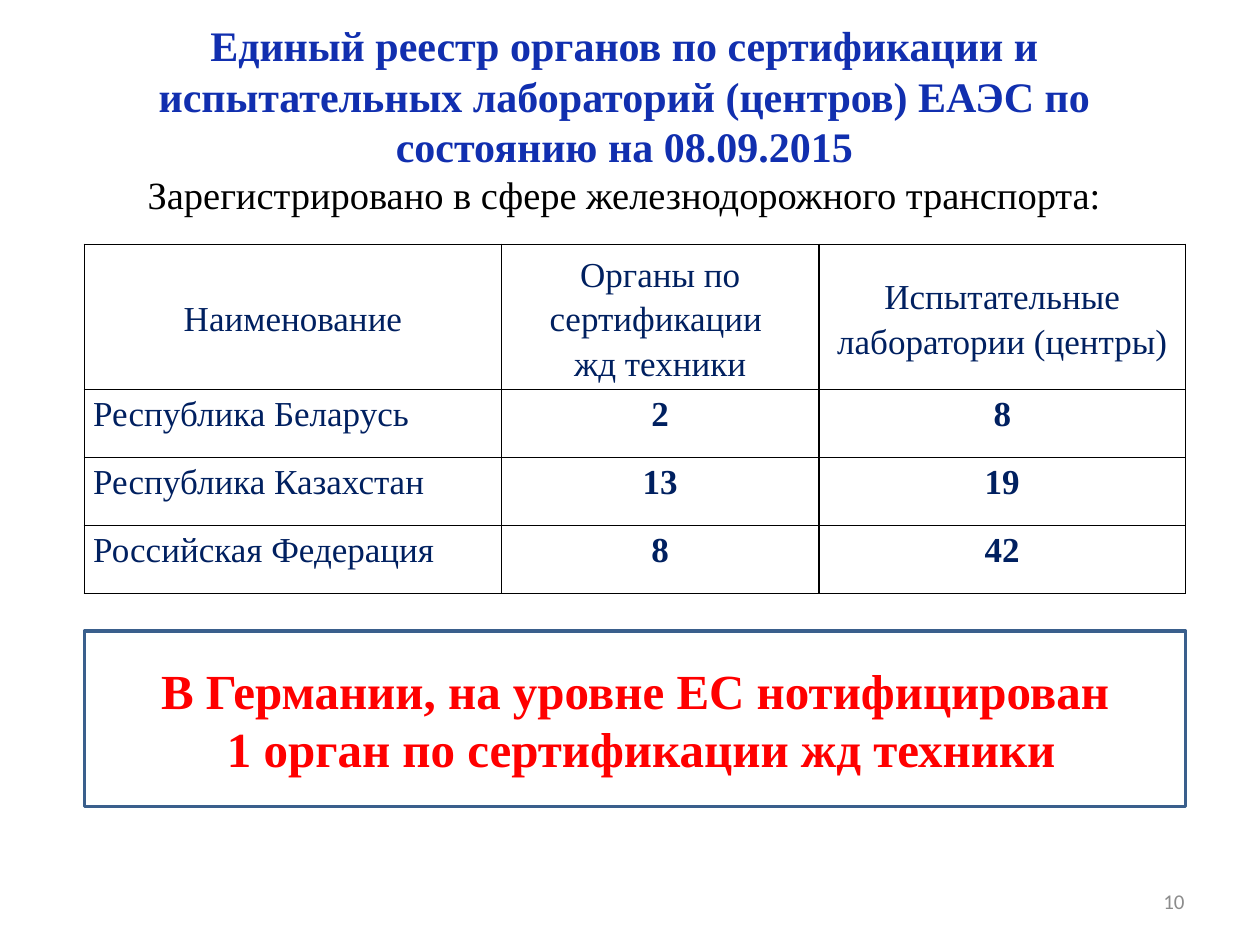
"""Build the slide on the unified register of certification bodies and test laboratories."""
from lxml.etree import SubElement
from pptx import Presentation
from pptx.dml.color import RGBColor
from pptx.enum.shapes import MSO_SHAPE
from pptx.enum.text import MSO_ANCHOR, MSO_AUTO_SIZE, PP_ALIGN
from pptx.oxml.ns import qn
from pptx.util import Inches, Pt

COLORS = {"heading": "112FAF", "black": "000000", "table": "002060", "white": "FFFFFF",
          "alert": "FF0000", "frame": "3A5F8C", "number": "8C8C8C"}
SERIF = "Times New Roman"
HEADER = ["Наименование", "Органы по сертификации \nжд техники",
          "Испытательные лаборатории (центры)"]
COUNTRIES = [["Республика Беларусь", "2", "8"],
             ["Республика Казахстан", "13", "19"],
             ["Российская Федерация", "8", "42"]]


def set_font(font, size, color, bold=False, name=SERIF):
    font.name, font.size, font.bold = name, Pt(size), bold
    font.color.rgb = RGBColor.from_string(COLORS[color])


def add_borders(cell):
    properties = cell._tc.get_or_add_tcPr()
    for side in ("lnL", "lnR", "lnT", "lnB"):
        border = SubElement(properties, qn(f"a:{side}"), w=str(Pt(1)))
        fill = SubElement(border, qn("a:solidFill"))
        SubElement(fill, qn("a:srgbClr"), val=COLORS["black"])


prs = Presentation()
prs.slide_width, prs.slide_height = Inches(10), Inches(7.5)
slide = prs.slides.add_slide(prs.slide_layouts[5])

title = slide.shapes.title
title.left, title.top = Inches(0.5), Inches(0.3)
title.width, title.height = Inches(8.91), Inches(0.85)
title_frame = title.text_frame
title_frame.auto_size = MSO_AUTO_SIZE.NONE
title_frame.word_wrap = True
title_frame.vertical_anchor = MSO_ANCHOR.MIDDLE
title_frame.margin_top = Inches(0.48)
heading = title_frame.paragraphs[0]
heading.alignment = PP_ALIGN.CENTER
register = heading.add_run()
register.text = ("Единый реестр органов по сертификации и испытательных лабораторий "
                 "(центров) ЕАЭС по состоянию на 08.09.2015")
set_font(register.font, 24, "heading", bold=True)
heading.add_line_break()
scope = heading.add_run()
scope.text = "Зарегистрировано в сфере железнодорожного транспорта:"
set_font(scope.font, 22, "black")

page = slide.shapes.add_textbox(Inches(7.17), Inches(6.95), Inches(2.33), Inches(0.4))
page.text_frame.word_wrap = True
page.text_frame.vertical_anchor = MSO_ANCHOR.MIDDLE
page_number = page.text_frame.paragraphs[0]
page_number.text = "10"
page_number.alignment = PP_ALIGN.RIGHT
set_font(page_number.font, 12, "number", name="Calibri")

registry = slide.shapes.add_table(4, 3, Inches(0.67), Inches(1.94),
                                  Inches(8.74), Inches(2.74)).table
for column, width in zip(registry.columns, (3.31, 2.52, 2.91)):
    column.width = Inches(width)
for row, height in zip(registry.rows, (1.12, 0.54, 0.54, 0.54)):
    row.height = Inches(height)
for r, values in enumerate([HEADER, *COUNTRIES]):
    for c, value in enumerate(values):
        cell = registry.cell(r, c)
        cell.text = value
        cell.margin_left = cell.margin_right = Inches(0.07)
        cell.margin_top = cell.margin_bottom = 0
        cell.vertical_anchor = MSO_ANCHOR.MIDDLE if r == 0 else MSO_ANCHOR.TOP
        add_borders(cell)
        cell.fill.solid()
        cell.fill.fore_color.rgb = RGBColor.from_string(COLORS["white"])
        for paragraph in cell.text_frame.paragraphs:
            paragraph.alignment = PP_ALIGN.LEFT if r and c == 0 else PP_ALIGN.CENTER
            paragraph.line_spacing = 1.15
            set_font(paragraph.font, 20, "table", bold=r > 0 and c > 0)

germany = slide.shapes.add_shape(MSO_SHAPE.RECTANGLE, Inches(0.67), Inches(5.01),
                                 Inches(8.74), Inches(1.39))
germany.shadow.inherit = False
germany.fill.solid()
germany.fill.fore_color.rgb = RGBColor.from_string(COLORS["white"])
germany.line.color.rgb = RGBColor.from_string(COLORS["frame"])
germany.line.width = Pt(2)
germany.text_frame.word_wrap = True
germany.text_frame.vertical_anchor = MSO_ANCHOR.MIDDLE
germany.text_frame.text = ("В Германии, на уровне ЕС нотифицирован\n"
                           " 1 орган по сертификации жд техники")
for paragraph in germany.text_frame.paragraphs:
    paragraph.alignment = PP_ALIGN.CENTER
    set_font(paragraph.font, 28, "alert", bold=True)

prs.save("out.pptx")
